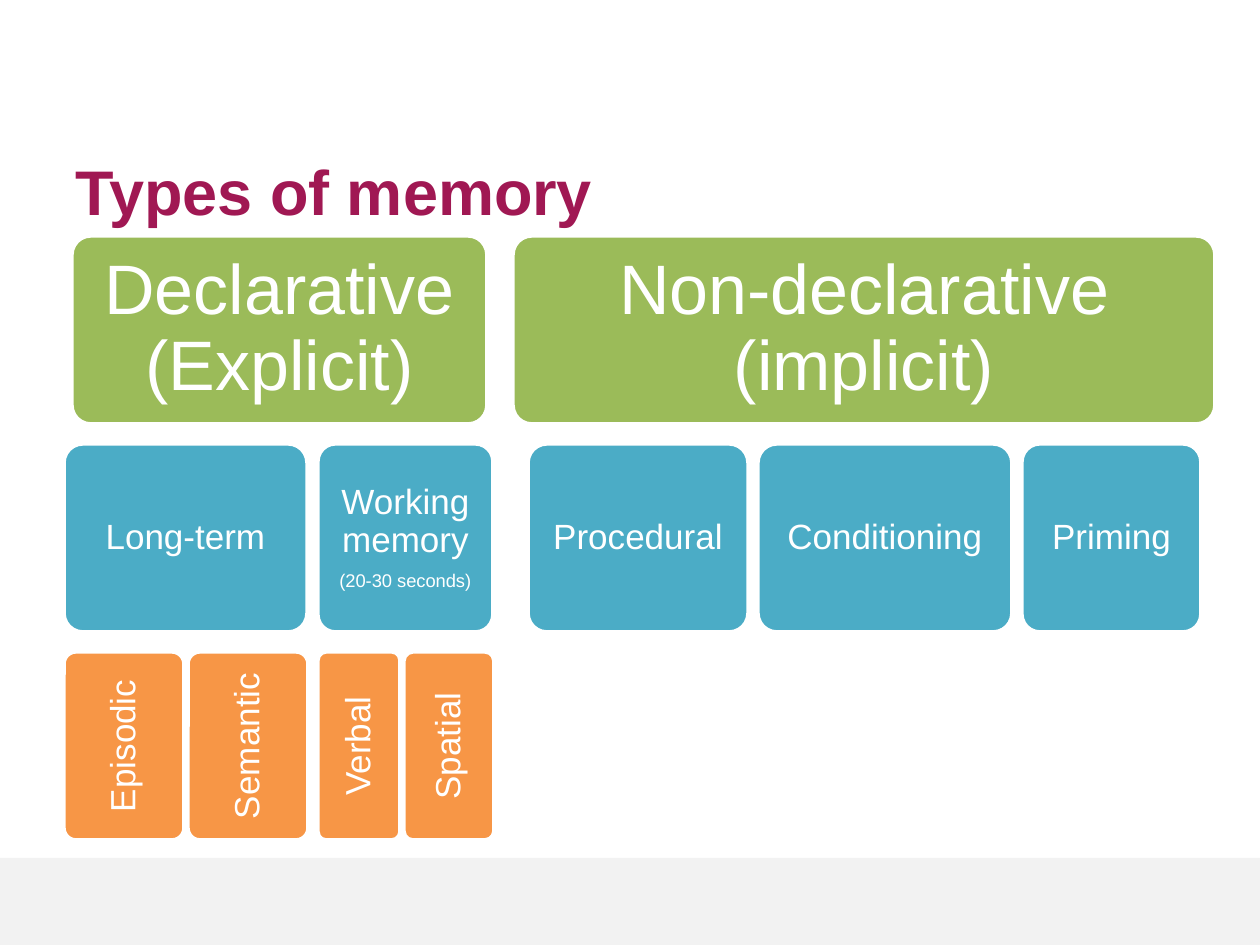
from dataclasses import dataclass

from pptx import Presentation
from pptx.dml.color import RGBColor
from pptx.enum.shapes import MSO_SHAPE
from pptx.enum.text import MSO_ANCHOR, PP_ALIGN
from pptx.slide import Slide
from pptx.util import Emu, Pt

PX_PER_INCH = 126


@dataclass(frozen=True)
class Theme:
    font: str = "Arial"
    title: str = "A01853"
    band: str = "F2F2F2"
    white: str = "FFFFFF"
    title_size: float = 36
    category_size: float = 40
    type_size: float = 20
    note_size: float = 10.5


@dataclass(frozen=True)
class Level:
    top: int
    color: str
    size: float
    vertical: bool = False


@dataclass(frozen=True)
class Box:
    level: Level
    left: int
    width: int
    label: str
    note: str = ""


THEME = Theme()
BOX_HEIGHT = 188
TOPS = [236 + 208 * row for row in range(3)]
CATEGORY = Level(TOPS[0], "9BBB59", THEME.category_size)
KIND = Level(TOPS[1], "4BACC6", THEME.type_size)
DETAIL = Level(TOPS[2], "F79646", THEME.type_size, vertical=True)

BOXES = [
    Box(CATEGORY, 72, 415, "Declarative (Explicit)"),
    Box(KIND, 64, 243, "Long-term"),
    Box(DETAIL, 64, 120, "Episodic"),
    Box(DETAIL, 188, 120, "Semantic"),
    Box(KIND, 318, 175, "Working memory", "(20-30 seconds)"),
    Box(DETAIL, 318, 82, "Verbal"),
    Box(DETAIL, 404, 90, "Spatial"),
    Box(CATEGORY, 513, 702, "Non-declarative (implicit)"),
    Box(KIND, 528, 220, "Procedural"),
    Box(KIND, 758, 254, "Conditioning"),
    Box(KIND, 1022, 179, "Priming"),
]


def px(length: int) -> Emu:
    return Emu(round(length * 914400 / PX_PER_INCH))


def rgb(color: str) -> RGBColor:
    return RGBColor.from_string(color)


def style_font(paragraph, size: float, color: str, bold: bool = False) -> None:
    for run in paragraph.runs:
        run.font.name = THEME.font
        run.font.size = Pt(size)
        run.font.bold = bold
        run.font.color.rgb = rgb(color)


def draw_footer_band(slide: Slide) -> None:
    shape = slide.shapes.add_shape(
        MSO_SHAPE.RECTANGLE, px(0), px(858), px(1260), px(87))
    shape.shadow.inherit = False
    shape.fill.solid()
    shape.fill.fore_color.rgb = rgb(THEME.band)
    shape.line.fill.background()


def draw_title(slide: Slide, text: str) -> None:
    shape = slide.shapes.add_textbox(px(63), px(141), px(1080), px(93))
    text_frame = shape.text_frame
    text_frame.word_wrap = True
    text_frame.vertical_anchor = MSO_ANCHOR.BOTTOM
    text_frame.text = text
    style_font(text_frame.paragraphs[0], THEME.title_size, THEME.title, True)


def draw_box(slide: Slide, box: Box) -> None:
    level = box.level
    shape = slide.shapes.add_shape(
        MSO_SHAPE.ROUNDED_RECTANGLE,
        px(box.left), px(level.top), px(box.width), px(BOX_HEIGHT))
    shape.adjustments[0] = 0.1
    shape.shadow.inherit = False
    shape.fill.solid()
    shape.fill.fore_color.rgb = rgb(level.color)
    shape.line.color.rgb = rgb(THEME.white)
    shape.line.width = Pt(2)

    text_frame = shape.text_frame
    text_frame.word_wrap = True
    text_frame.vertical_anchor = MSO_ANCHOR.MIDDLE
    text_frame.margin_left = text_frame.margin_right = px(5)
    text_frame.margin_top = text_frame.margin_bottom = px(10)
    if level.vertical:
        text_frame._txBody.bodyPr.set("vert", "vert270")

    text_frame.text = box.label
    label = text_frame.paragraphs[0]
    style_font(label, level.size, THEME.white)
    if box.note:
        label.space_after = Pt(0.35 * level.size)
        note = text_frame.add_paragraph()
        note.text = box.note
        style_font(note, THEME.note_size, THEME.white)
    for paragraph in text_frame.paragraphs:
        paragraph.alignment = PP_ALIGN.CENTER
        paragraph.line_spacing = 0.9


def main() -> None:
    presentation = Presentation()
    presentation.slide_width = px(1260)
    presentation.slide_height = px(945)
    slide = presentation.slides.add_slide(presentation.slide_layouts[6])
    draw_footer_band(slide)
    draw_title(slide, "Types of memory")
    for box in BOXES:
        draw_box(slide, box)
    presentation.save("out.pptx")


if __name__ == "__main__":
    main()
